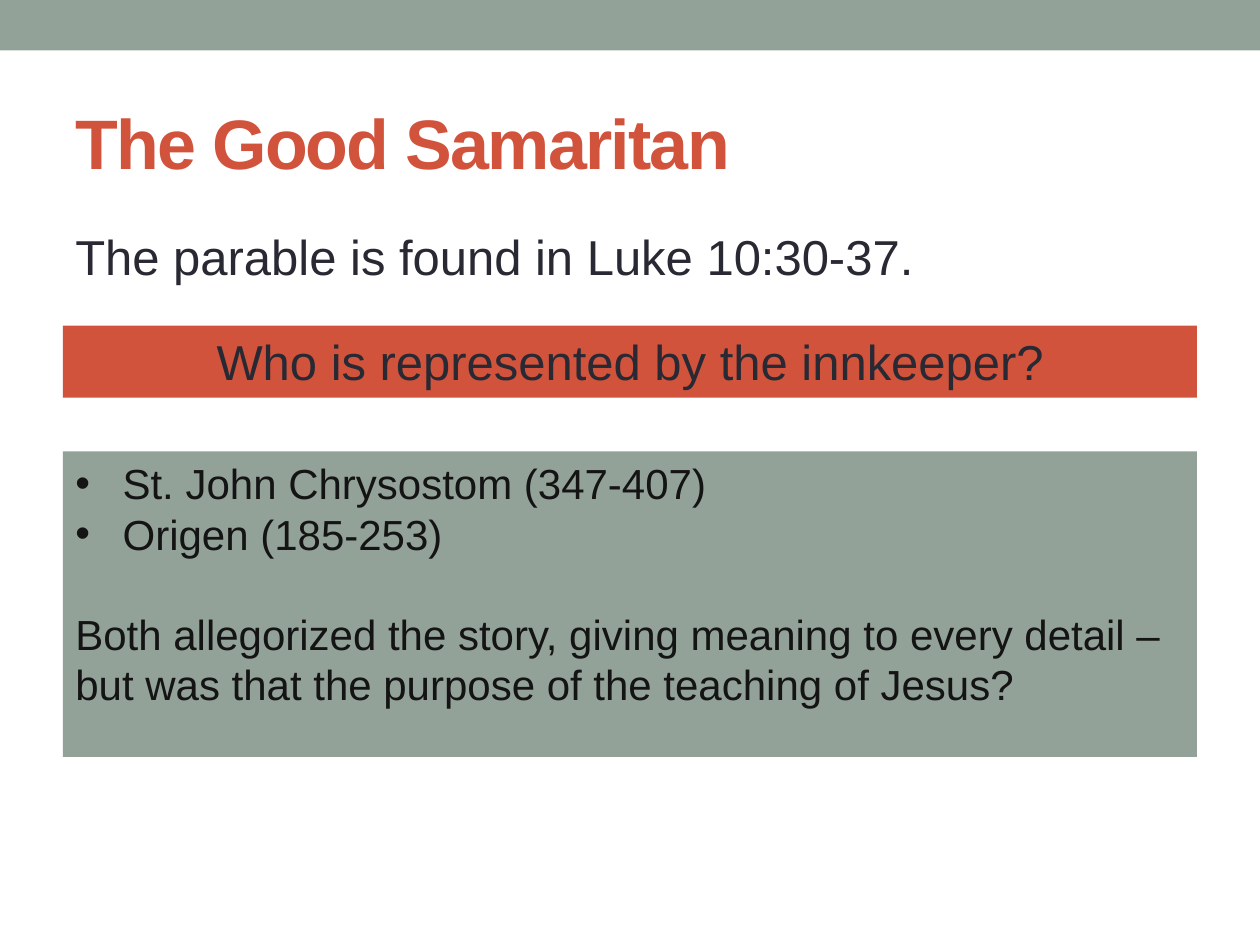
"""Build the Good Samaritan slide about the innkeeper."""
from lxml import etree
from pptx import Presentation
from pptx.dml.color import RGBColor
from pptx.enum.shapes import MSO_SHAPE
from pptx.enum.text import MSO_ANCHOR, PP_ALIGN
from pptx.oxml.ns import qn
from pptx.util import Pt

TITLE = "The Good Samaritan"
SOURCE = "The parable is found in Luke 10:30-37."
QUESTION = "Who is represented by the innkeeper?"
FATHERS = ["St. John Chrysostom (347-407)", "Origen (185-253)"]
REMARK = ("Both allegorized the story, giving meaning to every detail – "
          "but was that the purpose of the teaching of Jesus?")

RED, SAGE, INK, BLACK = "D2533C", "93A299", "292934", "141414"
PAGE_WIDTH, PAGE_HEIGHT, MARGIN = 720, 540, 36
COLUMN_WIDTH = PAGE_WIDTH - 2 * MARGIN
INDENT = 27


def rgb(color):
    return RGBColor.from_string(color)


def add_panel(slide, left, top, width, height, color):
    panel = slide.shapes.add_shape(
        MSO_SHAPE.RECTANGLE, Pt(left), Pt(top), Pt(width), Pt(height))
    panel.shadow.inherit = False
    panel.fill.solid()
    panel.fill.fore_color.rgb = rgb(color)
    panel.line.fill.background()
    return panel


def write(shape, lines, size, color, align=PP_ALIGN.LEFT,
          anchor=MSO_ANCHOR.TOP, bold=False):
    frame = shape.text_frame
    frame.word_wrap = True
    frame.vertical_anchor = anchor
    frame.text = "\n".join(lines)
    for paragraph in frame.paragraphs:
        paragraph.alignment = align
        for run in paragraph.runs:
            run.font.name = "Arial"
            run.font.size = Pt(size)
            run.font.bold = bold
            run.font.color.rgb = rgb(color)
    return frame.paragraphs


def add_bullet(paragraph):
    properties = paragraph._p.get_or_add_pPr()
    properties.set("marL", str(Pt(INDENT)))
    properties.set("indent", str(-Pt(INDENT)))
    etree.SubElement(properties, qn("a:buFont")).set("typeface", "Arial")
    etree.SubElement(properties, qn("a:buChar")).set("char", "•")


def main():
    deck = Presentation()
    deck.slide_width, deck.slide_height = Pt(PAGE_WIDTH), Pt(PAGE_HEIGHT)
    slide = deck.slides.add_slide(deck.slide_layouts[5])

    add_panel(slide, 0, 0, PAGE_WIDTH, 28.8, SAGE)

    title = slide.shapes.title
    title.left, title.top = Pt(MARGIN), Pt(42)
    title.width, title.height = Pt(COLUMN_WIDTH), Pt(78)
    heading = write(title, [TITLE], 40, RED, anchor=MSO_ANCHOR.MIDDLE, bold=True)
    heading[0].runs[0].font._element.set("spc", "-100")

    source = slide.shapes.add_textbox(
        Pt(MARGIN), Pt(126), Pt(COLUMN_WIDTH), Pt(48))
    write(source, [SOURCE], 28, INK)

    question = add_panel(slide, MARGIN, 186, COLUMN_WIDTH, 41.2, RED)
    write(question, [QUESTION], 28, INK, align=PP_ALIGN.CENTER)

    answer = add_panel(slide, MARGIN, 258, COLUMN_WIDTH, 174.5, SAGE)
    *fathers, remark = write(answer, FATHERS + [REMARK], 24, BLACK)
    for father in fathers:
        add_bullet(father)
    remark.space_before = Pt(28.5)

    deck.save("out.pptx")


if __name__ == "__main__":
    main()
